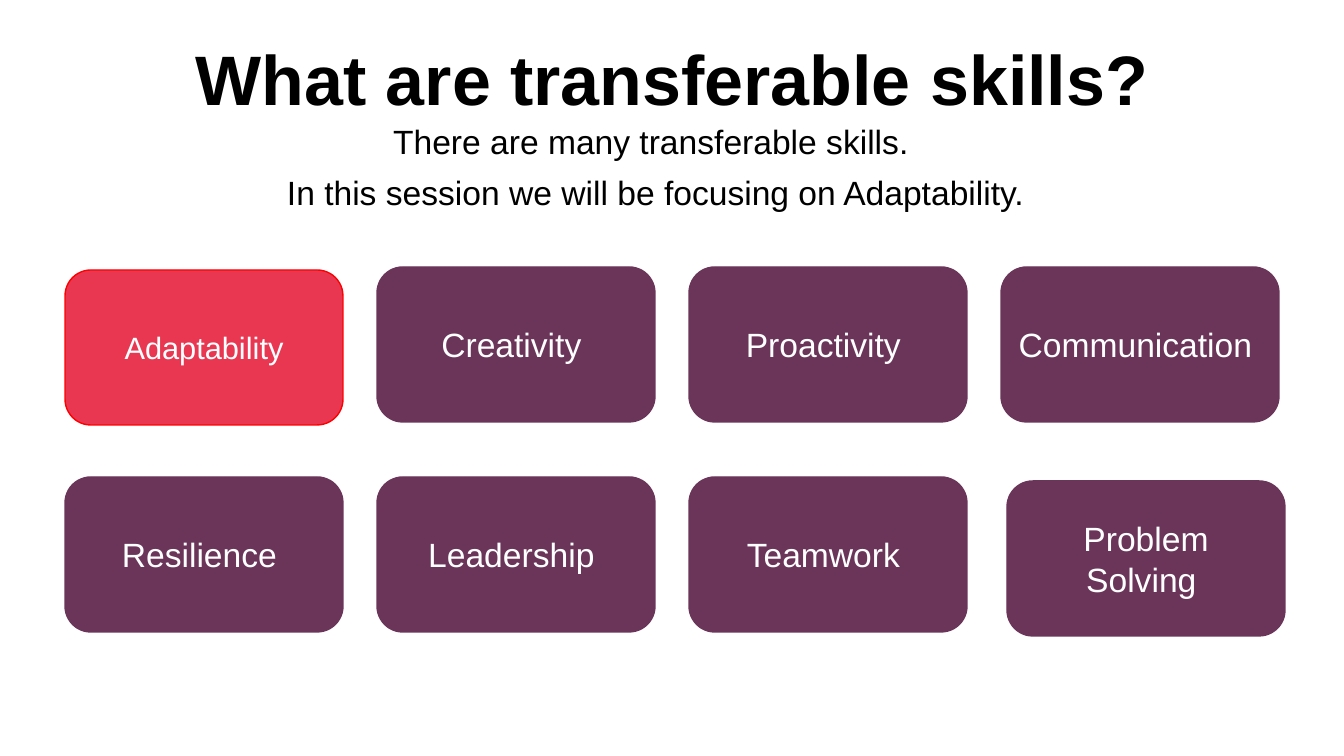
import pptx
import pptx.dml.color
import pptx.enum.shapes
import pptx.enum.text
import pptx.util

PLUM, RED, EDGE = "6B355A", "E93752", "FF0000"
BLACK, WHITE = "000000", "FFFFFF"
LEFT, TOP, STEP, DROP = 65, 267, 312, 210
WIDE, HIGH = 278, 155
SKILLS = [
    ["Adaptability", "Creativity ", "Proactivity ", "Communication "],
    ["Resilience ", "Leadership ", "Teamwork ", "Problem Solving "],
]
SHIFTS = {"Adaptability": (0, 3), "Problem Solving ": (6, 4)}


def tint(code):
    return pptx.dml.color.RGBColor.from_string(code)


def px(count):
    return pptx.util.Emu(round(count * 914400 / 100.8))


class Deck:
    """Hold the text style and the current slide."""

    def __init__(self):
        self.face = "Arial"
        self.show = pptx.Presentation()
        self.show.slide_width = px(1344)
        self.show.slide_height = px(756)
        self.slide = self.show.slides.add_slide(self.show.slide_layouts[6])

    def label(self, shape, words, size, color, bold=False):
        frame = shape.text_frame
        frame.word_wrap = True
        frame.text = words
        for para in frame.paragraphs:
            para.alignment = pptx.enum.text.PP_ALIGN.CENTER
            for run in para.runs:
                run.font.name = self.face
                run.font.size = pptx.util.Pt(size)
                run.font.bold = bold
                run.font.color.rgb = tint(color)
        return frame

    def text(self, x, y, w, h, words, size, bold=False):
        box = self.slide.shapes.add_textbox(px(x), px(y), px(w), px(h))
        frame = self.label(box, words, size, BLACK, bold)
        for index, para in enumerate(frame.paragraphs):
            para.line_spacing = 0.9
            if index:
                para.space_before = pptx.util.Pt(10)

    def card(self, x, y, words, size, fill, edge):
        kind = pptx.enum.shapes.MSO_SHAPE.ROUNDED_RECTANGLE
        card = self.slide.shapes.add_shape(kind, px(x), px(y), px(WIDE), px(HIGH))
        card.shadow.inherit = False
        card.fill.solid()
        card.fill.fore_color.rgb = tint(fill)
        card.line.color.rgb = tint(edge)
        card.line.width = pptx.util.Pt(1)
        frame = self.label(card, words, size, WHITE)
        frame.vertical_anchor = pptx.enum.text.MSO_ANCHOR.MIDDLE


def main():
    deck = Deck()
    deck.text(93, 40, 1159, 146, "What are transferable skills?", 50, True)
    deck.text(76, 121, 1159, 442,
              "There are many transferable skills. \n"
              "In this session we will be focusing on Adaptability.", 24)
    for row, names in enumerate(SKILLS):
        for col, name in enumerate(names):
            right, down = SHIFTS.get(name, (0, 0))
            look = (22, RED, EDGE) if name == "Adaptability" else (24, PLUM, PLUM)
            deck.card(LEFT + col * STEP + right, TOP + row * DROP + down, name, *look)
    deck.show.save("out.pptx")


if __name__ == "__main__":
    main()
